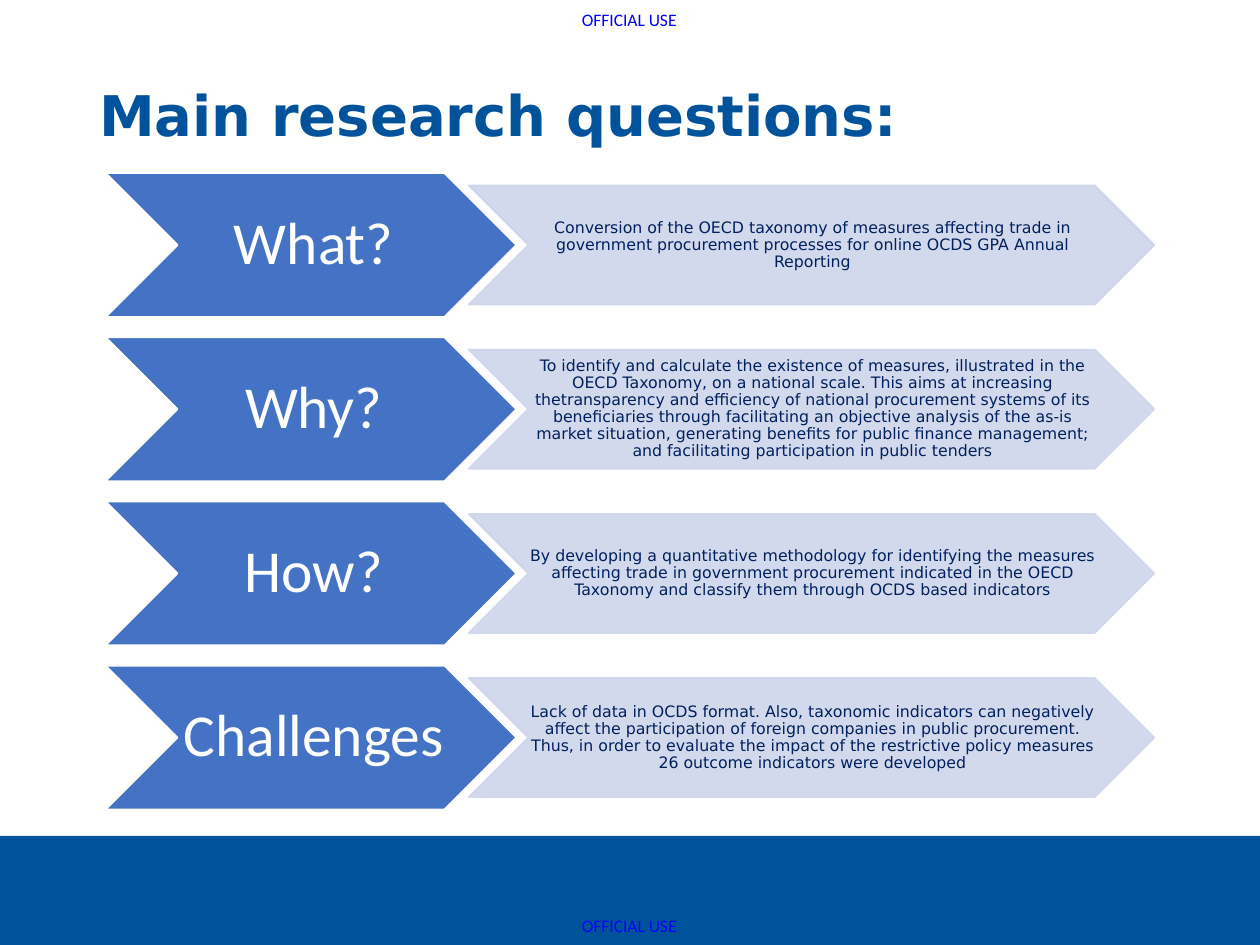
from lxml import etree
from pptx import Presentation
from pptx.dml.color import RGBColor
from pptx.enum.shapes import MSO_SHAPE as Preset
from pptx.enum.text import MSO_ANCHOR as Anchor, MSO_AUTO_SIZE as AutoSize, PP_ALIGN as Align
from pptx.oxml.ns import qn
from pptx.util import Cm, Pt

NAVY = RGBColor(0x00, 0x20, 0x60)
DEEP_BLUE = RGBColor(0x00, 0x53, 0x9B)
MID_BLUE = RGBColor(0x44, 0x72, 0xC4)
PALE_BLUE = RGBColor(0xCF, 0xD5, 0xEA)
LABEL_BLUE = RGBColor(0x00, 0x00, 0xFF)
WHITE = RGBColor(0xFF, 0xFF, 0xFF)

QUESTIONS = [
    ("What?", "Conversion of the OECD taxonomy of measures affecting trade in government "
     "procurement processes for online OCDS GPA Annual Reporting"),
    ("Why?", "To identify and calculate the existence of measures, illustrated in the OECD "
     "Taxonomy, on a national scale. This aims at increasing thetransparency and efficiency "
     "of national procurement systems of its beneficiaries through facilitating an objective "
     "analysis of the as-is market situation, generating benefits for public finance "
     "management; and facilitating participation in public tenders"),
    ("How?", "By developing a quantitative methodology for identifying the measures affecting "
     "trade in government procurement indicated in the OECD Taxonomy and classify them "
     "through OCDS based indicators"),
    ("Challenges", "Lack of data in OCDS format. Also, taxonomic indicators can negatively "
     "affect the participation of foreign companies in public procurement. Thus, in order to "
     "evaluate the impact of the restrictive policy measures 26 outcome indicators were "
     "developed"),
]


class SlideBuilder:
    """Holds the fonts and the current slide; all lengths are in centimetres."""

    heading_font = "DejaVu Sans"
    label_font = "Calibri"

    def __init__(self, page):
        self.page = page

    def shape(self, preset, left, top, width, height, fill, line=None, opacity=100):
        shape = self.page.shapes.add_shape(preset, Cm(left), Cm(top), Cm(width), Cm(height))
        shape.shadow.inherit = False
        shape.fill.solid()
        shape.fill.fore_color.rgb = fill
        if line is None:
            shape.line.fill.background()
        else:
            shape.line.color.rgb = line
            shape.line.width = Pt(1)
        if opacity < 100:
            for color in shape._element.spPr.iter(qn("a:srgbClr")):
                etree.SubElement(color, qn("a:alpha"), val=str(opacity * 1000))
        return shape

    def text(self, words, left, top, width, height, font, size, color, bold=False,
             align=Align.LEFT, anchor=Anchor.TOP, margins=(0.25, 0.13, 0.25, 0.13),
             spacing=0.9, wrap=True):
        box = self.page.shapes.add_textbox(Cm(left), Cm(top), Cm(width), Cm(height))
        frame = box.text_frame
        frame.text = words
        frame.word_wrap = wrap
        frame.auto_size = AutoSize.NONE if wrap else AutoSize.SHAPE_TO_FIT_TEXT
        frame.vertical_anchor = anchor
        (frame.margin_left, frame.margin_top,
         frame.margin_right, frame.margin_bottom) = map(Cm, margins)
        para = frame.paragraphs[0]
        para.alignment = align
        para.line_spacing = spacing
        span = para.runs[0]
        span.font.name = font
        span.font.size = Pt(size)
        span.font.bold = bold
        span.font.color.rgb = color

    def marking(self, top):
        self.text("OFFICIAL USE", 11.73, top, 2.01, 0.43, self.label_font, 10, LABEL_BLUE,
                  margins=(0, 0, 0, 0), spacing=1.0, wrap=False)

    def chevron(self, words, left, top, width, height, fill, line, font, size, color,
                margins, opacity=100):
        self.shape(Preset.CHEVRON, left, top, width, height, fill, line, opacity)
        # The text sits between the notch and the point, each half the height deep
        self.text(words, left + height / 2, top, width - height, height, font, size, color,
                  align=Align.CENTER, anchor=Anchor.MIDDLE, margins=margins)

    def question(self, label, answer, top):
        self.chevron(label, 2.13, top, 8.28, 2.9, MID_BLUE, WHITE,
                     self.label_font, 34, WHITE, (0.11, 0.05, 0, 0.05))
        self.chevron(answer, 9.45, top + 0.25, 13.82, 2.4, PALE_BLUE, PALE_BLUE,
                     self.heading_font, 9, NAVY, (0.03, 0.02, 0, 0.02), opacity=90)


def main():
    deck = Presentation()
    deck.slide_width, deck.slide_height = Cm(25.4), Cm(19.05)
    builder = SlideBuilder(deck.slides.add_slide(deck.slide_layouts[6]))

    # Footer band and markings
    builder.shape(Preset.RECTANGLE, 0, 16.85, 25.4, 2.2, DEEP_BLUE)
    builder.marking(0.18)
    builder.marking(18.44)

    # Title
    builder.text("Main research questions:", 1.75, 1.65, 21.9, 3.68,
                 builder.heading_font, 32, DEEP_BLUE, bold=True)

    # One row per question
    for row, (label, answer) in enumerate(QUESTIONS):
        builder.question(label, answer, 3.49 + row * 3.31)

    deck.save("out.pptx")


if __name__ == "__main__":
    main()
